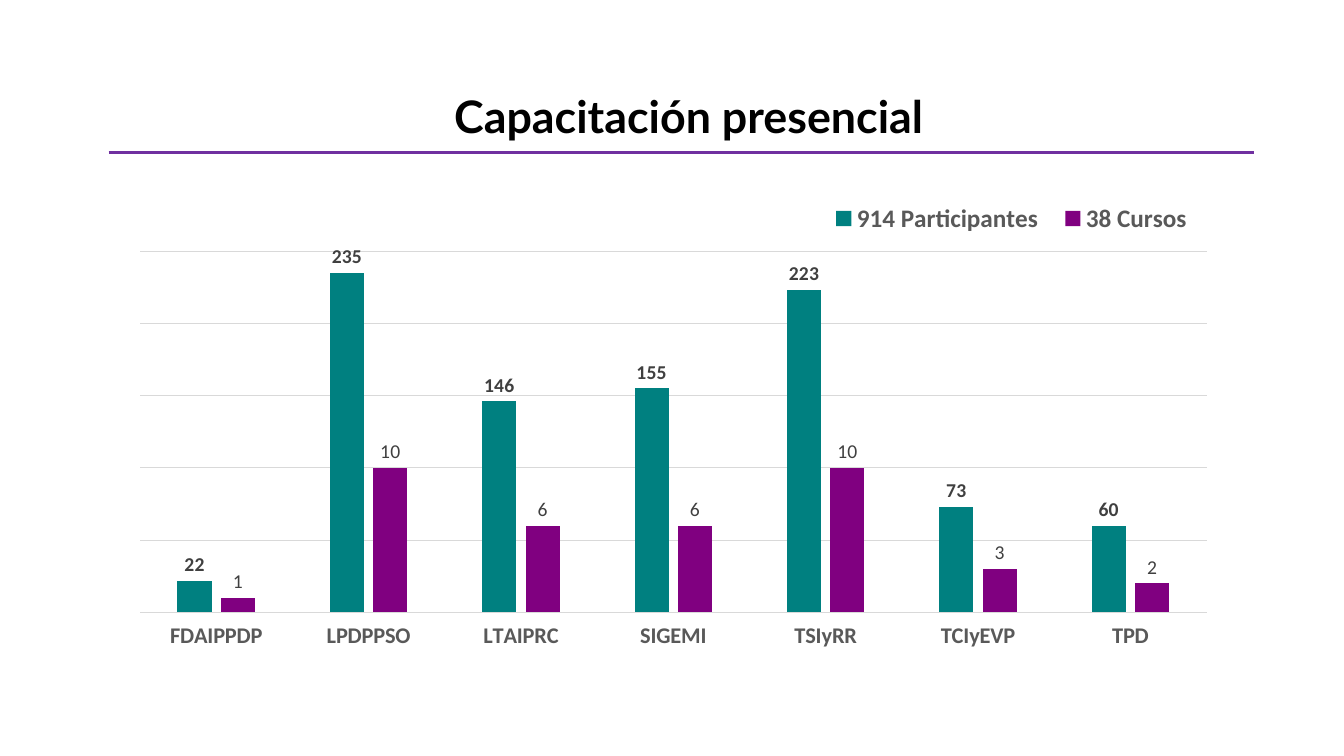
from lxml import etree
from pptx import Presentation
from pptx.chart.data import CategoryChartData
from pptx.dml.color import RGBColor
from pptx.enum.chart import (XL_CHART_TYPE, XL_LABEL_POSITION, XL_LEGEND_POSITION,
                             XL_TICK_LABEL_POSITION, XL_TICK_MARK)
from pptx.enum.shapes import MSO_CONNECTOR
from pptx.enum.text import PP_ALIGN
from pptx.oxml.ns import qn
from pptx.util import Cm, Pt

TOPICS = ["FDAIPPDP", "LPDPPSO", "LTAIPRC", "SIGEMI", "TSIyRR", "TCIyEVP", "TPD"]
PARTICIPANTS = [22, 235, 146, 155, 223, 73, 60]
COURSES = [1, 10, 6, 6, 10, 3, 2]
COURSE_SCALE = 10  # course bars are drawn ten times taller than their count
TEAL, PURPLE, VIOLET = "008080", "800080", "7030A0"
BLACK, DARK, GRAY, PALE = "000000", "404040", "595959", "D9D9D9"


def color(value):
    return RGBColor.from_string(value)


def style_font(font, size, ink, bold=True, name="Calibri"):
    font.name = name
    font.size = Pt(size)
    font.bold = bold
    font.color.rgb = color(ink)


def style_line(line, ink, width):
    line.color.rgb = color(ink)
    line.width = Pt(width)


def set_layout(parent, index, fractions, inner=False):
    """Place a chart part at x, y, w, h, given as fractions of the chart."""
    for previous in parent.findall(qn("c:layout")):
        parent.remove(previous)
    layout = etree.Element(qn("c:layout"))
    manual = etree.SubElement(layout, qn("c:manualLayout"))
    settings = [("xMode", "edge"), ("yMode", "edge"), *zip("xywh", fractions)]
    if inner:
        settings.insert(0, ("layoutTarget", "inner"))
    for tag, value in settings:
        etree.SubElement(manual, qn(f"c:{tag}")).set("val", str(value))
    parent.insert(index, layout)


def add_title(slide, text):
    title = slide.shapes.add_textbox(Cm(2.26), Cm(2.26), Cm(30.48), Cm(1.6))
    title.text_frame.word_wrap = True
    heading = title.text_frame.paragraphs[0]
    heading.text = text
    heading.alignment = PP_ALIGN.CENTER
    heading.line_spacing = 0.9
    style_font(heading.runs[0].font, 32, BLACK, name="Lato")


def add_rule(slide):
    rule = slide.shapes.add_connector(
        MSO_CONNECTOR.STRAIGHT, Cm(2.74), Cm(3.84), Cm(31.6), Cm(3.84))
    style_line(rule.line, VIOLET, 2.25)
    etree.SubElement(rule._element.spPr, qn("a:effectLst"))


def style_axes(chart):
    topics, amounts = chart.category_axis, chart.value_axis
    topics.major_tick_mark = XL_TICK_MARK.NONE
    topics.tick_label_position = XL_TICK_LABEL_POSITION.LOW
    style_font(topics.tick_labels.font, 16, GRAY)
    style_line(topics.format.line, PALE, 0.75)
    amounts.minimum_scale, amounts.maximum_scale, amounts.major_unit = 0, 250, 50
    amounts.has_major_gridlines = True
    style_line(amounts.major_gridlines.format.line, PALE, 0.75)
    amounts.visible = False


def style_series(series, fill):
    series.format.fill.solid()
    series.format.fill.fore_color.rgb = color(fill)
    labels = series.data_labels
    labels.show_value = True
    labels.position = XL_LABEL_POSITION.OUTSIDE_END
    labels.number_format, labels.number_format_is_linked = "#,##0", False
    style_font(labels.font, 14, DARK)


def label_courses(series):
    """Show the real course counts above the scaled bars."""
    for index, count in enumerate(COURSES):
        label = series.points[index].data_label
        label.text_frame.text = str(count)
        style_font(label.text_frame.paragraphs[0].runs[0].font, 14, DARK, bold=False)
        label.position = XL_LABEL_POSITION.OUTSIDE_END


def add_training_chart(slide):
    data = CategoryChartData(number_format="#,##0")
    data.categories = TOPICS
    data.add_series("914 Participantes", PARTICIPANTS)
    data.add_series("38 Cursos", [count * COURSE_SCALE for count in COURSES])
    chart = slide.shapes.add_chart(
        XL_CHART_TYPE.COLUMN_CLUSTERED, Cm(3), Cm(3.05), Cm(27.94), Cm(14.45), data).chart
    chart.has_title = False
    style_font(chart.font, 10, BLACK, bold=False)
    style_axes(chart)

    plot = chart.plots[0]
    plot.gap_width, plot.overlap, plot.vary_by_categories = 219, -27, False
    participants, courses = plot.series
    style_series(participants, TEAL)
    style_series(courses, PURPLE)
    label_courses(courses)

    chart.has_legend = True
    legend = chart.legend
    legend.position = XL_LEGEND_POSITION.BOTTOM
    legend.include_in_layout = False
    style_font(legend.font, 18, GRAY)
    set_layout(legend._element, 1, (0.63, 0.13, 0.35, 0.08))
    set_layout(chart._chartSpace.chart.plotArea, 0, (0.019, 0.227, 0.962, 0.63), inner=True)


def main():
    presentation = Presentation()
    presentation.slide_width, presentation.slide_height = Cm(33.87), Cm(19.05)
    slide = presentation.slides.add_slide(presentation.slide_layouts[6])
    add_title(slide, "Capacitación presencial ")
    add_rule(slide)
    add_training_chart(slide)
    presentation.save("out.pptx")


if __name__ == "__main__":
    main()
